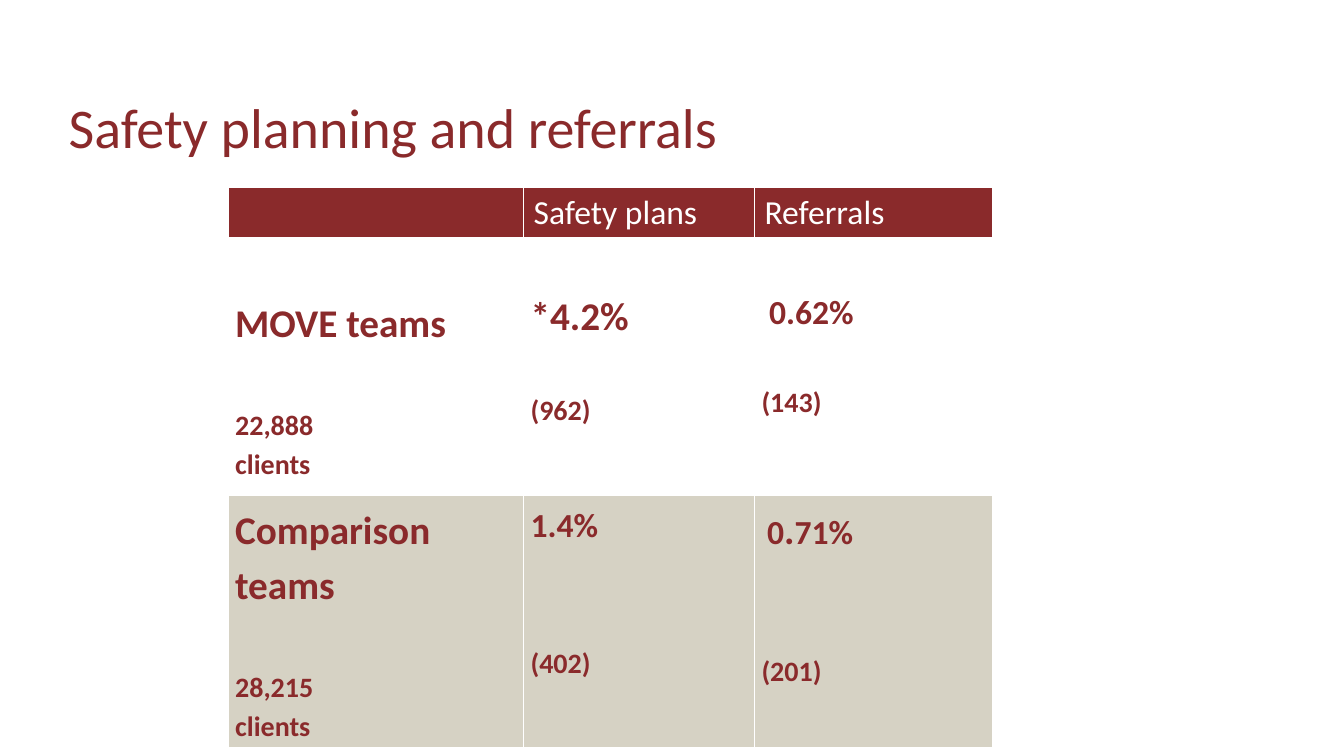
import pptx
import pptx.util
import pptx.dml.color
import pptx.enum.text
import pptx.oxml
import pptx.oxml.ns

Pt = pptx.util.Pt
MAROON, SAND, WHITE = "8A2A2B", "D6D2C4", "FFFFFF"


def rgb(value):
    return pptx.dml.color.RGBColor.from_string(value)


class Deck:
    """Holds the style and the current slide, and draws each kind of element."""

    font = "Calibri"

    def __init__(self, width, height):
        self.prs = pptx.Presentation()
        self.prs.slide_width, self.prs.slide_height = Pt(width), Pt(height)
        self.s = self.prs.slides.add_slide(self.prs.slide_layouts[5])

    def run(self, p, text, size, color=MAROON, bold=False):
        r = p.add_run()
        r.text = text
        for name, value in {"name": self.font, "size": Pt(size), "bold": bold}.items():
            setattr(r.font, name, value)
        r.font.color.rgb = rgb(color)

    def title(self, text, left, top, width, height):
        sp = self.s.shapes.title
        box = {"left": left, "top": top, "width": width, "height": height}
        for name, value in box.items():
            setattr(sp, name, Pt(value))
        tf = sp.text_frame
        style = {"margin_left": 0, "margin_top": 0, "margin_right": 0, "margin_bottom": 0,
                 "word_wrap": True, "auto_size": pptx.enum.text.MSO_AUTO_SIZE.NONE,
                 "vertical_anchor": pptx.enum.text.MSO_ANCHOR.BOTTOM}
        for name, value in style.items():
            setattr(tf, name, value)
        p = tf.paragraphs[0]
        p.alignment = pptx.enum.text.PP_ALIGN.LEFT
        self.run(p, text, 40)

    def table(self, left, top, widths, heights):
        frame = self.s.shapes.add_table(len(heights), len(widths), Pt(left), Pt(top),
                                        Pt(sum(widths)), Pt(sum(heights)))
        tbl = frame.table
        for col, width in zip(tbl.columns, widths):
            col.width = Pt(width)
        for row, height in zip(tbl.rows, heights):
            row.height = Pt(height)
        return tbl

    def borders(self, cell, bottom=1, top=1):
        tcPr = cell._tc.get_or_add_tcPr()
        for side, width in {"L": 1, "R": 1, "T": top, "B": bottom}.items():
            tcPr.append(pptx.oxml.parse_xml(
                f'<a:ln{side} {pptx.oxml.ns.nsdecls("a")} w="{Pt(width)}"><a:solidFill>'
                f'<a:srgbClr val="{WHITE}"/></a:solidFill></a:ln{side}>'))

    def fill(self, cell, color):
        cell.fill.solid()
        cell.fill.fore_color.rgb = rgb(color)

    def header(self, cell, text):
        self.borders(cell, bottom=3)
        self.fill(cell, MAROON)
        if text:
            self.run(cell.text_frame.paragraphs[0], text, 24, WHITE)

    def body(self, cell, color, top, paragraphs, above):
        self.borders(cell, top=3 if color == WHITE else 1)
        self.fill(cell, color)
        margins = {"margin_left": 5, "margin_top": top, "margin_right": 5, "margin_bottom": 0}
        for name, value in margins.items():
            setattr(cell, name, Pt(value))
        tf = cell.text_frame
        for i, (gap, runs) in enumerate(paragraphs):
            p = tf.paragraphs[0] if i == 0 else tf.add_paragraph()
            p.line_spacing = 1.15
            p.space_before = Pt(gap)
            for text, size in runs:
                self.run(p, text, size, bold=True)


GAP, NAME_GAP = 33.75, 39.5


def team(name, clients):
    return [(0, [(name, 28)]), (NAME_GAP, [(clients, 20)]), (0, [("clients", 20)])]


def share(runs, count, gap):
    return [(0, runs), (gap, [(count, 20)])]


HEADERS = ["", "Safety plans", "Referrals"]
ROWS = [
    (WHITE, [
        (39, team("MOVE teams", "22,888")),
        (34, share([("*4.2%", 28)], "(962)", GAP)),
        (34, share([(" 0.62%", 24)], "(143)", GAP)),
    ]),
    (SAND, [
        (3, team("Comparison teams", "28,215")),
        (3, share([("1.4%", 24)], "(402)", 2 * GAP)),
        (3, share([(" ", 18), ("0", 24), (".", 28), ("71%", 24)], "(201)", 2 * GAP)),
    ]),
]


def main():
    deck = Deck(960, 540)
    deck.title("Safety planning and referrals", 49, 34, 862, 80)
    tbl = deck.table(163, 134, [211, 165, 170], [36, 183.5, 180])
    for col, text in enumerate(HEADERS):
        deck.header(tbl.cell(0, col), text)
    for row, (color, cells) in enumerate(ROWS, 1):
        for col, (top, paragraphs) in enumerate(cells):
            deck.body(tbl.cell(row, col), color, top, paragraphs, row)
    deck.prs.save("out.pptx")


if __name__ == "__main__":
    main()
